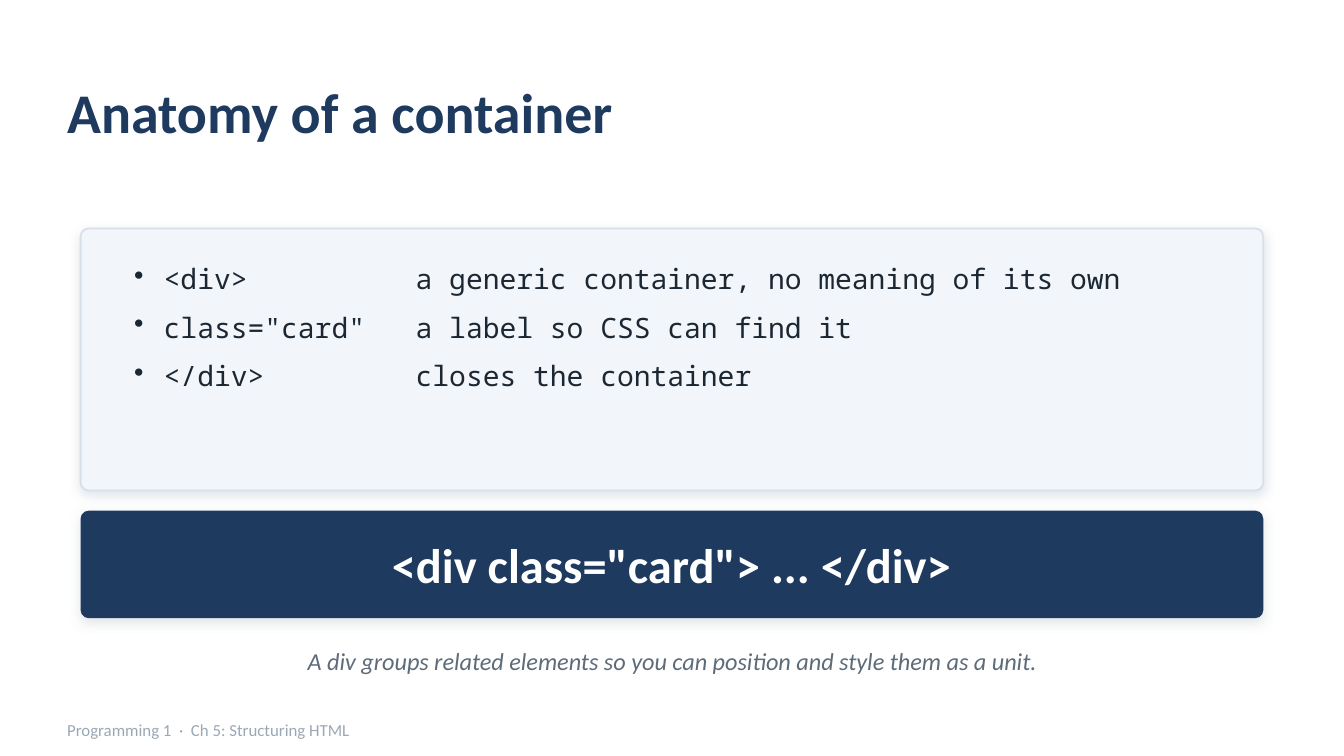
from lxml.etree import SubElement
from pptx import Presentation
from pptx.dml.color import RGBColor
from pptx.enum.shapes import MSO_SHAPE as Shape
from pptx.enum.text import MSO_ANCHOR as Anchor, PP_ALIGN as Align
from pptx.oxml import parse_xml
from pptx.oxml.ns import nsdecls, qn
from pptx.util import Inches, Pt

NAVY, MIST = "1F3A5F", "9AA8B6"
UNIT = Inches(0.1)  # one grid column or row
COLUMNS = 100
ROWS = COLUMNS * 9 / 16
MARGIN, INSET = 5, 6  # columns left of the title and of the cards
CARD_WIDTH = COLUMNS - 2 * INSET
RADIUS = 0.6


def paint(target, color):
    """Give a fill, line fill or font a solid colour."""
    if hasattr(target, "solid"):
        target.solid()
        target.fore_color.rgb = RGBColor.from_string(color)
    else:
        target.color.rgb = RGBColor.from_string(color)


def add_text(text, area, *, size, color, font="Calibri", bold=False, italic=False,
             align=Align.LEFT, anchor=Anchor.MIDDLE, padding=(0, 0), after=0,
             indent=0, tab=None):
    box = page.shapes.add_textbox(*[int(n * UNIT) for n in area])
    frame = box.text_frame
    frame.word_wrap = True
    frame.vertical_anchor = anchor
    frame.margin_left = frame.margin_right = int(padding[0] * UNIT)
    frame.margin_top = frame.margin_bottom = int(padding[1] * UNIT)
    frame.text = text
    for para in frame.paragraphs:
        para.alignment = align
        para.space_after = Pt(after)
        if indent:
            props = para._p.get_or_add_pPr()
            props.set("marL", str(int(indent * UNIT)))
            props.set("indent", str(int(-indent * UNIT)))
            SubElement(props, qn("a:buSzPct"), val="100000")
            SubElement(props, qn("a:buChar"), char="•")
            stops = SubElement(props, qn("a:tabLst"))
            SubElement(stops, qn("a:tab"), pos=str(int(tab * UNIT)), algn="l")
        for span in para.runs:
            span.font.name, span.font.size = font, Pt(size)
            span.font.bold, span.font.italic = bold, italic
            paint(span.font, color)


deck = Presentation()
deck.slide_width, deck.slide_height = int(COLUMNS * UNIT), int(ROWS * UNIT)
page = deck.slides.add_slide(deck.slide_layouts[6])
paint(page.background.fill, "FFFFFF")

# Title
add_text("Anatomy of a container", (MARGIN, 4, COLUMNS - 2 * MARGIN, 8.5),
         size=30, color=NAVY, bold=True)

# Rounded cards with a soft shadow
for top, height, fill, outline in [(17, 19.5, "F2F5F9", "D8E0E9"), (38, 8, NAVY, None)]:
    card = page.shapes.add_shape(
        Shape.ROUNDED_RECTANGLE, *[int(n * UNIT) for n in (INSET, top, CARD_WIDTH, height)])
    card.adjustments[0] = RADIUS / height
    paint(card.fill, fill)
    if outline:
        paint(card.line.fill, outline)
        card.line.width = Pt(1)
    else:
        card.line.fill.background()
    card.shadow.inherit = False
    card._element.spPr.find(qn("a:effectLst")).append(parse_xml(
        f'<a:outerShdw {nsdecls("a")} blurRad="{Pt(6)}" dist="{Pt(2)}" dir="5400000" '
        f'rotWithShape="0"><a:srgbClr val="{MIST}"><a:alpha val="28000"/></a:srgbClr>'
        '</a:outerShdw>'))

# Code parts and their meanings, in two tabbed columns
parts = [
    ("<div>", "a generic container, no meaning of its own"),
    ('class="card"', "a label so CSS can find it"),
    ("</div>", "closes the container"),
]
add_text("\n".join("\t".join(part) for part in parts),
         (INSET + 3, 19, CARD_WIDTH - 6, 16), size=15, color="1B2733",
         font="Noto Sans Mono", anchor=Anchor.TOP, padding=(1, 0.5), after=8,
         indent=2.2, tab=20.95)

# Whole element, caption and footer
add_text('<div class="card"> ... </div>', (INSET, 38.3, CARD_WIDTH, 7.4),
         size=26, color="FFFFFF", bold=True, align=Align.CENTER)
add_text("A div groups related elements so you can position and style them as a unit.",
         (INSET, 47.2, CARD_WIDTH, 4), size=13, color="5E6B79", italic=True,
         align=Align.CENTER)
add_text("Programming 1  ·  Ch 5: Structuring HTML", (MARGIN, 53, 80, 2.6),
         size=9, color=MIST)

deck.save("out.pptx")
